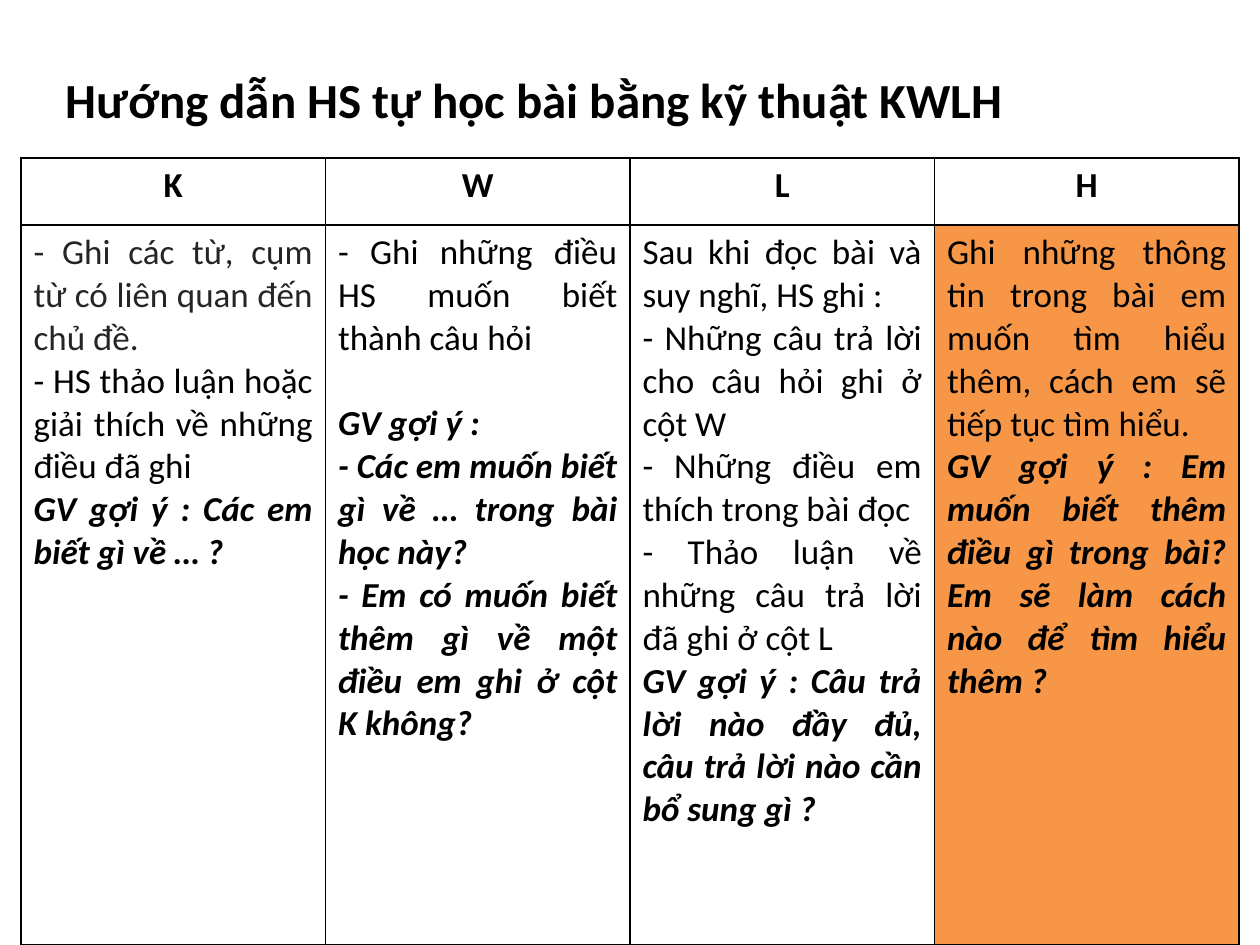
from dataclasses import dataclass

from lxml.etree import SubElement
from pptx import Presentation
from pptx.dml.color import RGBColor
from pptx.enum.text import MSO_ANCHOR, MSO_AUTO_SIZE, PP_ALIGN
from pptx.oxml.ns import qn
from pptx.util import Emu, Pt


@dataclass(frozen=True)
class Theme:
    font: str = "Calibri"
    ink: str = "000000"
    soft_ink: str = "252525"
    highlight: str = "F79646"
    title_size: int = 28
    table_size: int = 20
    blank_line: float = 24.4
    border_width: int = 1


@dataclass(frozen=True)
class Line:
    text: str
    prompt: bool = False
    color: str = Theme.ink
    space_before: float = 0


THEME = Theme()

TITLE = "Hướng dẫn HS tự học bài bằng kỹ thuật KWLH"
KWLH = {
    "K": [
        Line("- Ghi các từ, cụm từ có liên quan đến chủ đề.", color=THEME.soft_ink),
        Line("- HS thảo luận hoặc giải thích về những điều đã ghi"),
        Line("GV gợi ý : Các em biết gì về … ?", prompt=True),
    ],
    "W": [
        Line("- Ghi những điều HS muốn biết thành câu hỏi"),
        Line("GV gợi ý :", prompt=True, space_before=THEME.blank_line),
        Line("- Các em muốn biết gì về … trong bài học này?", prompt=True),
        Line("- Em có muốn biết thêm gì về một điều em ghi ở cột K không?", prompt=True),
    ],
    "L": [
        Line("Sau khi đọc bài và suy nghĩ, HS ghi :"),
        Line("- Những câu trả lời cho câu hỏi ghi ở cột W"),
        Line("- Những điều em thích trong bài đọc"),
        Line("- Thảo luận về những câu trả lời đã ghi ở cột L"),
        Line("GV gợi ý : Câu trả lời nào đầy đủ, câu trả lời nào cần bổ sung gì ?", prompt=True),
    ],
    "H": [
        Line("Ghi những thông tin trong bài em muốn tìm hiểu thêm, cách em sẽ tiếp tục tìm hiểu."),
        Line("GV gợi ý : Em muốn biết thêm điều gì trong bài? "
             "Em sẽ làm cách nào để tìm hiểu thêm ?", prompt=True),
    ],
}
HIGHLIGHTED_COLUMN = "H"


def px(length):
    return Emu(round(length * 914400 / 126))


def write(paragraph, text, size, align, bold=False, italic=False, color=THEME.ink):
    paragraph.text = text
    paragraph.alignment = align
    for run in paragraph.runs:
        font = run.font
        font.name, font.size = THEME.font, Pt(size)
        font.bold, font.italic = bold, italic
        font.color.rgb = RGBColor.from_string(color)


def add_title(slide):
    title = slide.shapes.title
    title.left, title.top, title.width, title.height = px(53), px(63), px(1134), px(88)
    frame = title.text_frame
    frame.word_wrap = True
    frame.auto_size = MSO_AUTO_SIZE.NONE
    frame.vertical_anchor = MSO_ANCHOR.TOP
    write(frame.paragraphs[0], TITLE, THEME.title_size, PP_ALIGN.LEFT, bold=True)


def outline(cell):
    """Draw all four borders; call before the fill is set, as borders come first in the XML."""
    properties = cell._tc.get_or_add_tcPr()
    for side in ("a:lnL", "a:lnR", "a:lnT", "a:lnB"):
        border = SubElement(properties, qn(side), w=str(Pt(THEME.border_width)))
        fill = SubElement(border, qn("a:solidFill"))
        SubElement(fill, qn("a:srgbClr"), val=THEME.ink)


def write_guidance(cell, lines):
    frame = cell.text_frame
    for index, line in enumerate(lines):
        paragraph = frame.add_paragraph() if index else frame.paragraphs[0]
        write(paragraph, line.text, THEME.table_size, PP_ALIGN.JUSTIFY,
              bold=line.prompt, italic=line.prompt, color=line.color)
        if line.space_before:
            paragraph.space_before = Pt(line.space_before)


def add_kwlh_table(slide):
    header_height, guidance_height = px(67), px(720)
    table = slide.shapes.add_table(2, len(KWLH), px(21), px(158), px(1218),
                                   header_height + guidance_height).table
    table.first_row = table.horz_banding = False
    table.rows[0].height, table.rows[1].height = header_height, guidance_height
    for column, (letter, lines) in enumerate(KWLH.items()):
        header, guidance = table.cell(0, column), table.cell(1, column)
        for cell in (header, guidance):
            outline(cell)
            cell.fill.background()
        write(header.text_frame.paragraphs[0], letter, THEME.table_size,
              PP_ALIGN.CENTER, bold=True)
        write_guidance(guidance, lines)
        if letter == HIGHLIGHTED_COLUMN:
            guidance.fill.solid()
            guidance.fill.fore_color.rgb = RGBColor.from_string(THEME.highlight)


def main():
    presentation = Presentation()
    presentation.slide_width, presentation.slide_height = px(1260), px(945)
    title_only = presentation.slide_layouts[5]
    slide = presentation.slides.add_slide(title_only)
    add_title(slide)
    add_kwlh_table(slide)
    presentation.save("out.pptx")


if __name__ == "__main__":
    main()
